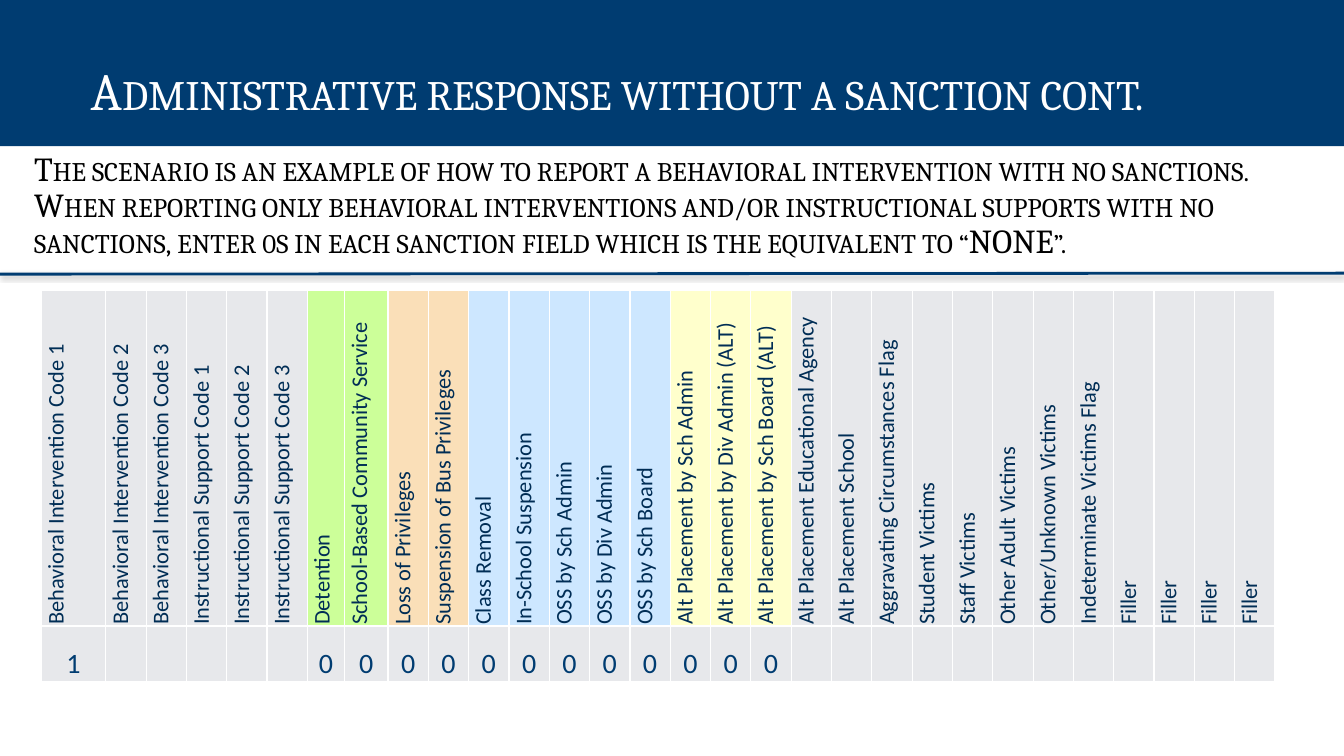
from dataclasses import dataclass

from lxml.etree import SubElement
from pptx import Presentation
from pptx.dml.color import RGBColor
from pptx.enum.shapes import MSO_CONNECTOR
from pptx.enum.text import MSO_ANCHOR, MSO_AUTO_SIZE, PP_ALIGN
from pptx.oxml import parse_xml
from pptx.oxml.ns import nsdecls, qn
from pptx.util import Pt


@dataclass(frozen=True)
class Theme:
    navy: str = "003C71"
    ink: str = "002D55"
    white: str = "FFFFFF"
    black: str = "000000"
    grey: str = "E7E8EB"
    green: str = "CCFF99"
    orange: str = "FADFB8"
    blue: str = "CDE7FF"
    yellow: str = "FFFFCC"
    heading_font: str = "Cambria"
    table_font: str = "Calibri"
    title_size: float = 37.4
    body_size: float = 24
    label_size: float = 16
    value_size: float = 20


@dataclass(frozen=True)
class ColumnGroup:
    fill: str
    value: str
    labels: tuple[str, ...]


@dataclass(frozen=True)
class Column:
    label: str
    value: str
    fill: str
    width: float


THEME = Theme()

TITLE = "Administrative response without a sanction cont."
SCENARIO = (
    "The scenario is an example of how to report a behavioral intervention with no "
    "sanctions. When reporting only behavioral interventions and/or instructional "
    "supports with no sanctions, enter 0s in each sanction field which is the "
    "equivalent to “NONE”."
)

GROUPS = (
    ColumnGroup(THEME.grey, "1", ("Behavioral Intervention Code 1",)),
    ColumnGroup(THEME.grey, "", (
        "Behavioral Intervention Code 2", "Behavioral Intervention Code 3",
        "Instructional Support Code 1", "Instructional Support Code 2",
        "Instructional Support Code 3")),
    ColumnGroup(THEME.green, "0", ("Detention", "School-Based Community Service")),
    ColumnGroup(THEME.orange, "0", ("Loss of Privileges", "Suspension of Bus Privileges")),
    ColumnGroup(THEME.blue, "0", (
        "Class Removal", "In-School Suspension", "OSS by Sch Admin",
        "OSS by Div Admin", "OSS by Sch Board")),
    ColumnGroup(THEME.yellow, "0", (
        "Alt Placement by Sch Admin", "Alt Placement by Div Admin (ALT)",
        "Alt Placement by Sch Board (ALT)")),
    ColumnGroup(THEME.grey, "", (
        "Alt Placement Educational Agency", "Alt Placement School",
        "Aggravating Circumstances Flag", "Student Victims", "Staff Victims",
        "Other Adult Victims", "Other/Unknown Victims", "Indeterminate Victims Flag",
        *("Filler",) * 4)),
)
COLUMN_WIDTH = 28.8
SPECIAL_WIDTHS = {
    "Behavioral Intervention Code 1": 46.08,
    "Detention": 26.64,
    "School-Based Community Service": 30.96,
}
COLUMNS = [
    Column(label, g.value, g.fill, SPECIAL_WIDTHS.get(label, COLUMN_WIDTH))
    for g in GROUPS for label in g.labels
]
HEADER_HEIGHT, VALUE_HEIGHT = 239.76, 39.6


def write(tf, text: str, *, font: str, size: float, color: str, align=PP_ALIGN.LEFT,
          line_spacing: float = 1.0, small_caps: bool = False) -> None:
    p = tf.paragraphs[0]
    p.alignment = align
    p.line_spacing = line_spacing
    r = p.add_run()
    r.text = text
    r.font.name = font
    r.font.size = Pt(size)
    r.font.color.rgb = RGBColor.from_string(color)
    if small_caps:
        r.font._element.set("cap", "small")


def set_frame(tf, left: float, top: float, right: float, bottom: float) -> None:
    tf.word_wrap = True
    tf.auto_size = MSO_AUTO_SIZE.NONE
    tf.vertical_anchor = MSO_ANCHOR.TOP
    tf.margin_left, tf.margin_top = Pt(left), Pt(top)
    tf.margin_right, tf.margin_bottom = Pt(right), Pt(bottom)


def add_title(s) -> None:
    sp = s.shapes.title
    sp.left, sp.top, sp.width, sp.height = Pt(0), Pt(0), Pt(960), Pt(104.4)
    sp.fill.solid()
    sp.fill.fore_color.rgb = RGBColor.from_string(THEME.navy)
    set_frame(sp.text_frame, 64.8, 50.4, 7.2, 3.6)
    write(sp.text_frame, TITLE, font=THEME.heading_font, size=THEME.title_size,
          color=THEME.white, line_spacing=0.8, small_caps=True)
    sp.text_frame.paragraphs[0].space_before = Pt(10)


def add_scenario(s) -> None:
    sp = s.shapes.add_textbox(Pt(15.12), Pt(103.68), Pt(936.72), Pt(404.64))
    set_frame(sp.text_frame, 9.36, 5.04, 9.36, 5.04)
    write(sp.text_frame, SCENARIO, font=THEME.heading_font, size=THEME.body_size,
          color=THEME.black, line_spacing=0.9, small_caps=True)


def add_divider(s) -> None:
    line = s.shapes.add_connector(
        MSO_CONNECTOR.STRAIGHT, Pt(0), Pt(195.84), Pt(960), Pt(195.12))
    line.line.color.rgb = RGBColor.from_string(THEME.navy)
    line.line.width = Pt(2)
    line._element.spPr.append(parse_xml(
        f'<a:effectLst {nsdecls("a")}>'
        f'<a:outerShdw blurRad="{Pt(3.1)}" dist="{Pt(1.6)}" dir="5400000" rotWithShape="0">'
        f'<a:srgbClr val="{THEME.black}"><a:alpha val="38000"/></a:srgbClr>'
        '</a:outerShdw></a:effectLst>'))


def format_cell(cell, fill: str) -> None:
    cell.fill.solid()
    cell.fill.fore_color.rgb = RGBColor.from_string(fill)
    cell.vertical_anchor = MSO_ANCHOR.BOTTOM
    cell.margin_left = cell.margin_right = cell.margin_top = Pt(0.72)
    cell.margin_bottom = Pt(0)
    # Borders precede the fill in the cell properties
    tc_pr = cell._tc.get_or_add_tcPr()
    for i, side in enumerate(("lnL", "lnR", "lnT", "lnB")):
        ln = SubElement(tc_pr, qn(f"a:{side}"), w=str(Pt(1)))
        solid = SubElement(ln, qn("a:solidFill"))
        SubElement(solid, qn("a:srgbClr"), val=THEME.white)
        tc_pr.insert(i, ln)


def add_sanction_table(s) -> None:
    table = s.shapes.add_table(
        2, len(COLUMNS), Pt(29.52), Pt(207.36), Pt(sum(c.width for c in COLUMNS)),
        Pt(HEADER_HEIGHT + VALUE_HEIGHT)).table
    table.first_row = table.horz_banding = False
    table.rows[0].height, table.rows[1].height = Pt(HEADER_HEIGHT), Pt(VALUE_HEIGHT)
    for i, column in enumerate(COLUMNS):
        table.columns[i].width = Pt(column.width)
        header, value = table.cell(0, i), table.cell(1, i)
        format_cell(header, column.fill)
        header._tc.tcPr.set("vert", "vert270")
        write(header.text_frame, column.label, font=THEME.table_font,
              size=THEME.label_size, color=THEME.ink, align=PP_ALIGN.JUSTIFY)
        format_cell(value, THEME.grey)
        if column.value:
            write(value.text_frame, column.value, font=THEME.table_font,
                  size=THEME.value_size, color=THEME.navy, align=PP_ALIGN.CENTER)


def main() -> None:
    prs = Presentation()
    prs.slide_width, prs.slide_height = Pt(960), Pt(540)
    s = prs.slides.add_slide(prs.slide_layouts.get_by_name("Title Only"))
    add_title(s)
    add_scenario(s)
    add_divider(s)
    add_sanction_table(s)
    prs.save("out.pptx")


if __name__ == "__main__":
    main()
